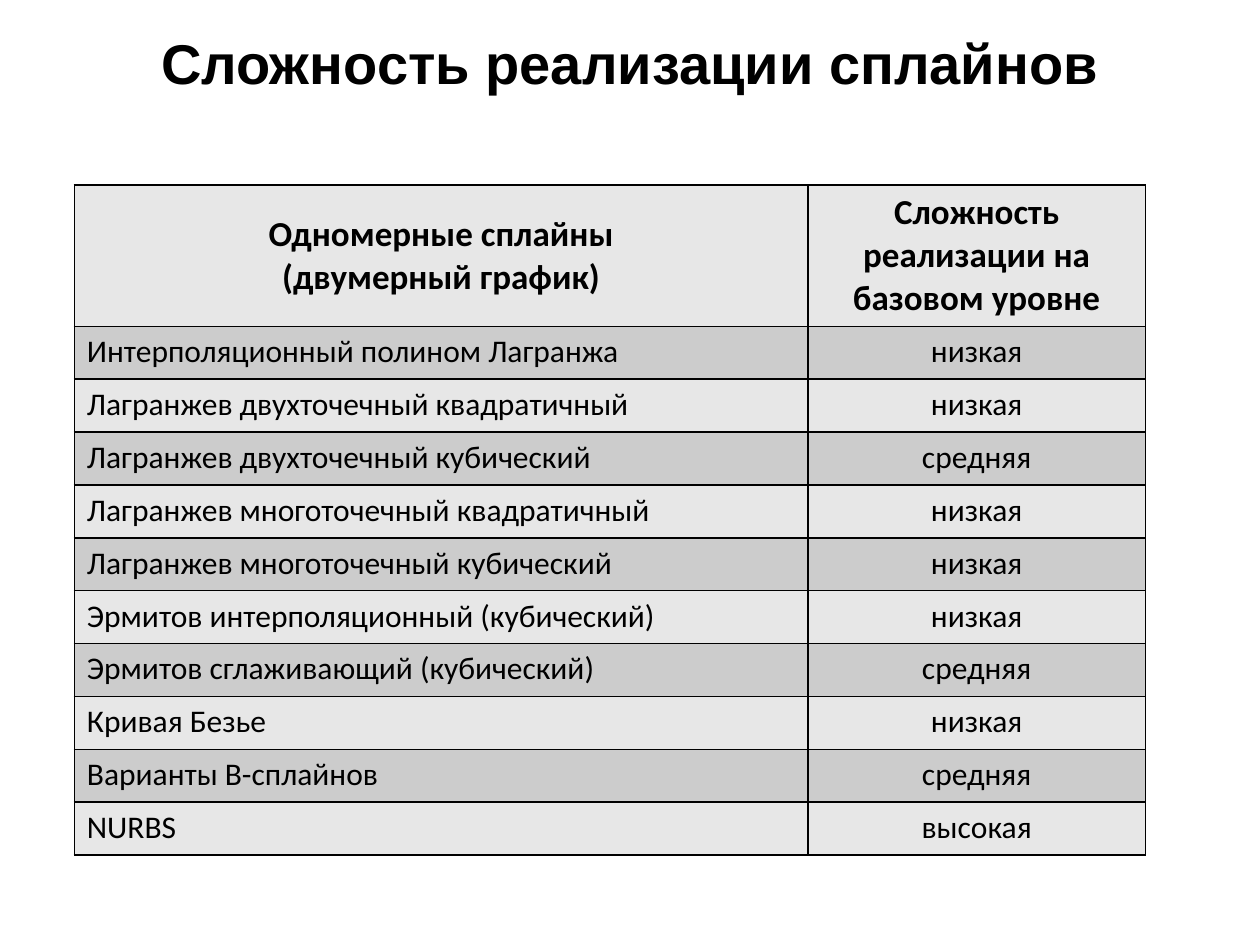
from dataclasses import dataclass

from lxml import etree
from pptx import Presentation
from pptx import util as u
from pptx.dml.color import RGBColor
from pptx.enum import text
from pptx.oxml import ns


@dataclass(frozen=True)
class Theme:
    ink: str = "000000"
    light: str = "E7E7E7"
    dark: str = "CCCCCC"
    title_font: str = "Arial"
    table_font: str = "Calibri"
    title_size: int = 32
    header_size: int = 20
    body_size: int = 18
    border_width: int = 1


THEME = Theme()
TITLE = "Сложность реализации сплайнов"
HEADERS = (
    ("Одномерные сплайны", "(двумерный график)"),
    ("Сложность реализации на базовом уровне",),
)
SPLINES = (
    ("Интерполяционный полином Лагранжа", "низкая"),
    ("Лагранжев двухточечный квадратичный", "низкая"),
    ("Лагранжев двухточечный кубический", "средняя"),
    ("Лагранжев многоточечный квадратичный", "низкая"),
    ("Лагранжев многоточечный кубический", "низкая"),
    ("Эрмитов интерполяционный (кубический)", "низкая"),
    ("Эрмитов сглаживающий (кубический)", "средняя"),
    ("Кривая Безье", "низкая"),
    ("Варианты В-сплайнов", "средняя"),
    ("NURBS", "высокая"),
)
COLUMN_SHARES = (0.685, 0.315)
HEADER_HEIGHT = 1.12


def write_lines(paragraph, lines, font, size, bold, alignment):
    paragraph.alignment = alignment
    for index, line in enumerate(lines):
        if index:
            paragraph.add_line_break()
        run = paragraph.add_run()
        run.text = line
        run.font.name = font
        run.font.size = u.Pt(size)
        run.font.bold = bold
        run.font.color.rgb = RGBColor.from_string(THEME.ink)


def add_borders(cell):
    properties = cell._tc.get_or_add_tcPr()
    for position, side in enumerate(("lnL", "lnR", "lnT", "lnB")):
        border = etree.Element(ns.qn(f"a:{side}"), w=str(u.Pt(THEME.border_width)))
        fill = etree.SubElement(border, ns.qn("a:solidFill"))
        etree.SubElement(fill, ns.qn("a:srgbClr"), val=THEME.ink)
        properties.insert(position, border)


def add_title(slide, left, top, width, height):
    box = slide.shapes.add_textbox(*map(u.Inches, (left, top, width, height)))
    frame = box.text_frame
    frame.word_wrap = True
    frame.vertical_anchor = text.MSO_ANCHOR.MIDDLE
    write_lines(frame.paragraphs[0], (TITLE,), THEME.title_font,
                THEME.title_size, True, text.PP_ALIGN.CENTER)


def add_spline_table(slide, left, top, width, height):
    rows = [HEADERS] + [tuple((value,) for value in row) for row in SPLINES]
    table = slide.shapes.add_table(
        len(rows), len(HEADERS), *map(u.Inches, (left, top, width, height))).table
    for column, share in zip(table.columns, COLUMN_SHARES):
        column.width = u.Inches(width * share)
    body_height = (height - HEADER_HEIGHT) / len(SPLINES)
    for row_index, row in enumerate(rows):
        header = row_index == 0
        table.rows[row_index].height = u.Inches(HEADER_HEIGHT if header else body_height)
        for column_index, lines in enumerate(row):
            cell = table.cell(row_index, column_index)
            cell.fill.solid()
            cell.fill.fore_color.rgb = RGBColor.from_string(
                THEME.dark if row_index % 2 else THEME.light)
            add_borders(cell)
            if header:
                cell.vertical_anchor = text.MSO_ANCHOR.MIDDLE
            centred = header or column_index == 1
            write_lines(
                cell.text_frame.paragraphs[0], lines, THEME.table_font,
                THEME.header_size if header else THEME.body_size, header,
                text.PP_ALIGN.CENTER if centred else text.PP_ALIGN.LEFT)


def main():
    presentation = Presentation()
    presentation.slide_width = u.Inches(10)
    presentation.slide_height = u.Inches(7.5)
    slide = presentation.slides.add_slide(presentation.slide_layouts[6])
    add_title(slide, 0, 0, 10, 0.98)
    add_spline_table(slide, 0.59, 1.47, 8.5, 5.32)
    presentation.save("out.pptx")


if __name__ == "__main__":
    main()
